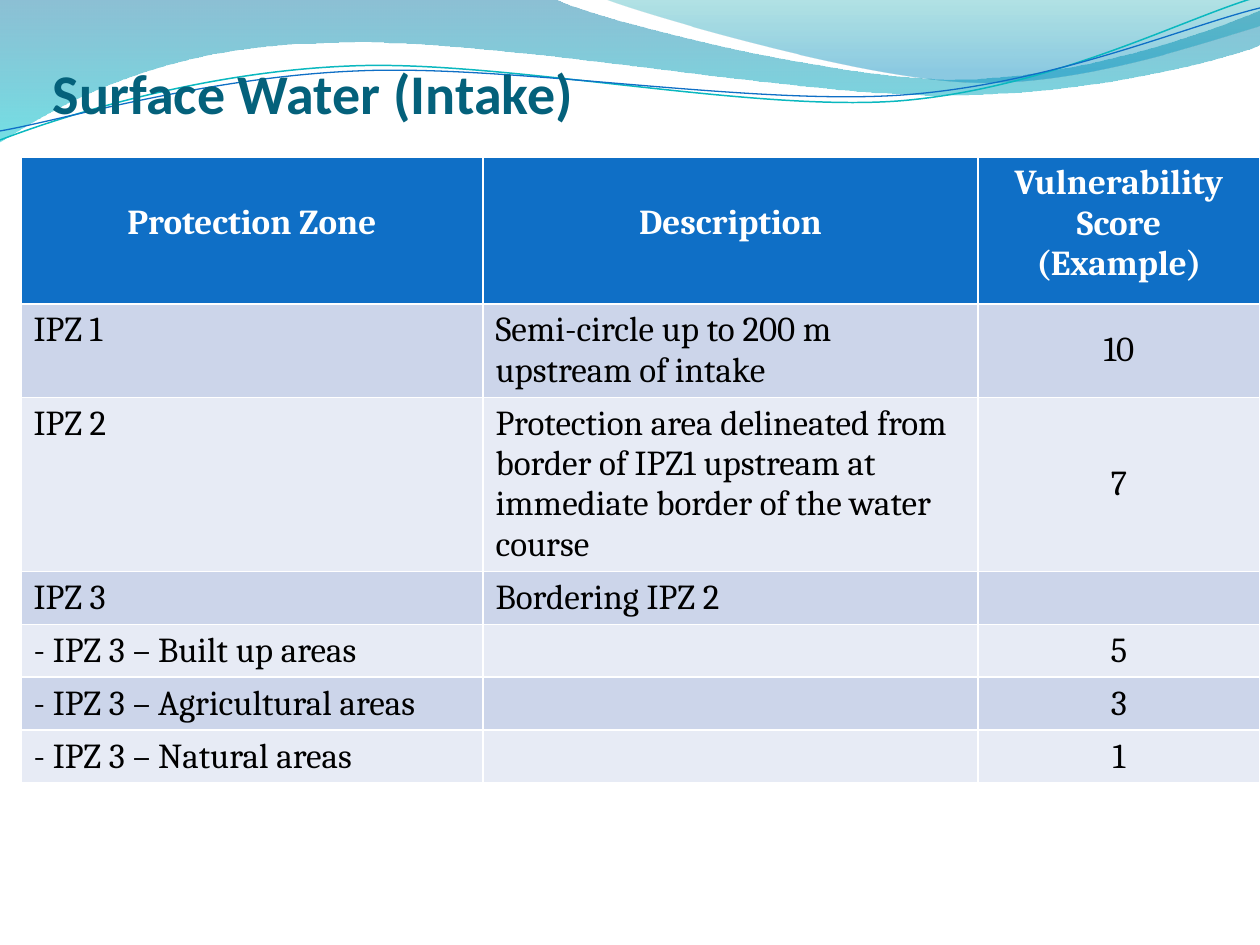
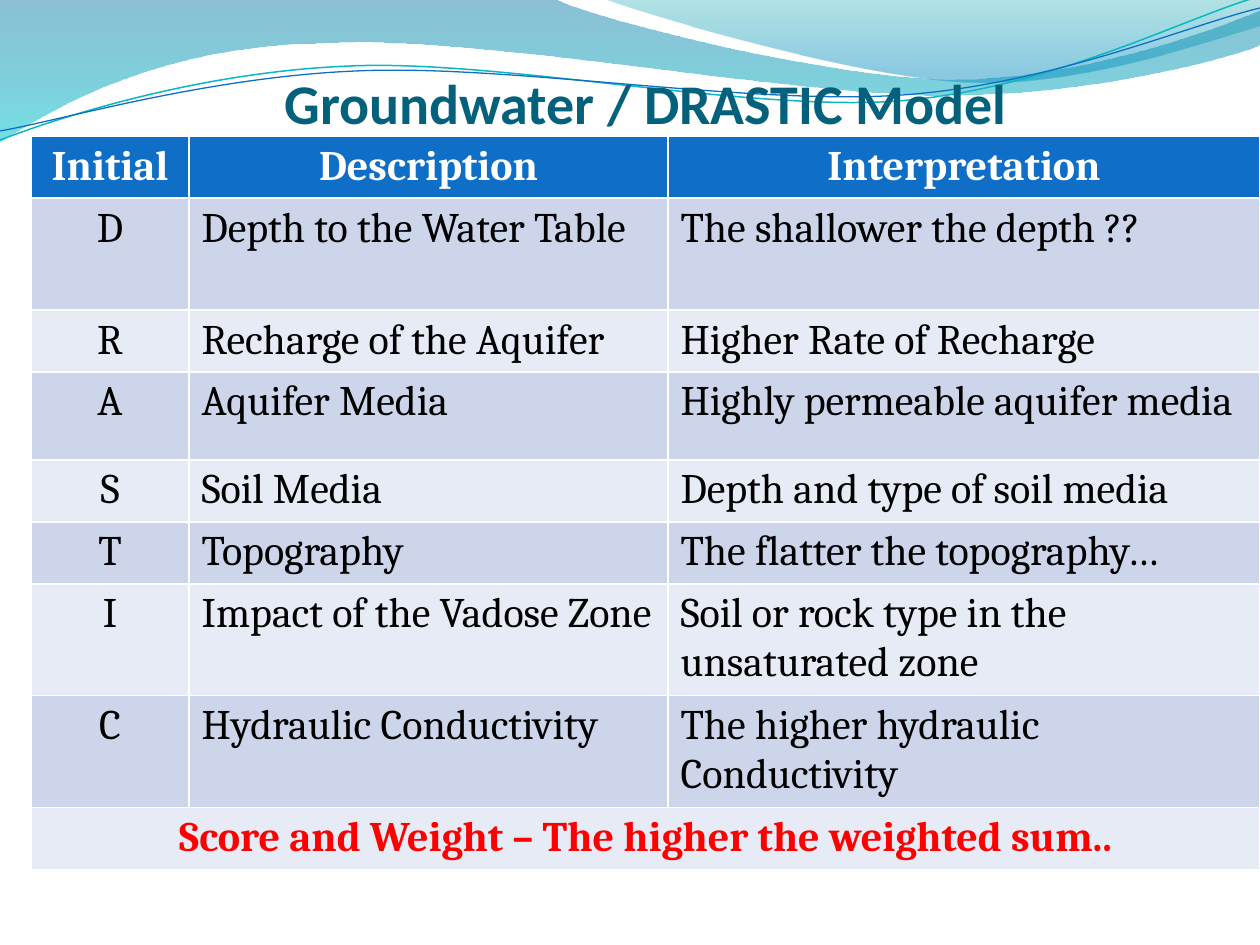
from lxml.etree import SubElement
from pptx import Presentation
from pptx.dml.color import RGBColor
from pptx.enum.text import MSO_ANCHOR as ANCHOR, MSO_AUTO_SIZE as AUTO, PP_ALIGN as ALIGN
from pptx.oxml.ns import qn
from pptx.util import Emu, Pt

SCALE = 914400 / 126
TITLE_FONT, BODY_FONT = "Calibri", "Cambria"
TITLE_COLOR = RGBColor(0x04, 0x61, 0x7B)
HEADER = RGBColor(0x0F, 0x6F, 0xC6)
TEAL = RGBColor(0x0A, 0xB8, 0xBF)
DEEP_BLUE = RGBColor(0x00, 0x74, 0xA1)
AQUA = RGBColor(0x00, 0xC6, 0xCF)
SEA_GREEN = RGBColor(0x00, 0xA1, 0xA9)
SKY = RGBColor(0x00, 0x8B, 0xBF)
WHITE = RGBColor(0xFF, 0xFF, 0xFF)
BLACK = RGBColor(0x00, 0x00, 0x00)
RED = RGBColor(0xFF, 0x00, 0x00)
BANDS = RGBColor(0xCC, 0xD5, 0xEA), RGBColor(0xE7, 0xEB, 0xF5)

WAVES = [
    ([(0, 0), (554, -1), (600, 21, 837, 79, 955, 79),
      (1075, 79, 1207, 33, 1260, 11), (1261, 45),
      (1239, 55, 1096, 96, 940, 95), (783, 95, 481, 35, 324, 43),
      (163, 45, 58, 105, -1, 142), (0, 0)],
     [(0, DEEP_BLUE, 45), (1, AQUA, 55)]),
    ([(604, -1), (641, 14, 859, 78, 969, 82),
      (1079, 87, 1211, 40, 1260, 26), (1260, 0), (604, -1)],
     [(0, SEA_GREEN, 30), (0.8, SKY, 45)]),
]
STRANDS = [
    ([(0, 140), (60, 117, 199, 72, 349, 66), (498, 59, 747, 112, 898, 101),
      (1050, 89, 1182, 19, 1257, -3)], TEAL, 0.85),
    ([(0, 131), (59, 121, 207, 77, 357, 71), (508, 64, 752, 106, 903, 95),
      (1053, 84, 1186, 26, 1260, 8)], HEADER, 0.75),
]

INTAKE_ROWS = [
    ("Protection Zone", "Description", "Vulnerability Score (Example)"),
    ("IPZ 1", "Semi-circle up to 200 m upstream of intake", "10"),
    ("IPZ 2", "Protection area delineated from border of IPZ1 upstream at "
              "immediate border of the water course", "7"),
    ("IPZ 3", "Bordering IPZ 2", ""),
    ("- IPZ 3 – Built up areas", "", "5"),
    ("- IPZ 3 – Agricultural areas", "", "3"),
    ("- IPZ 3 – Natural areas", "", "1"),
]
DRASTIC_ROWS = [
    ("Initial", "Description", "Interpretation"),
    ("D", "Depth to the Water Table", "The shallower the depth ??"),
    ("R", "Recharge of the Aquifer", "Higher Rate of Recharge"),
    ("A", "Aquifer Media", "Highly permeable aquifer media"),
    ("S", "Soil Media", "Depth and type of soil media"),
    ("T", "Topography", "The flatter the topography…"),
    ("I", "Impact of the Vadose Zone", "Soil or rock type in the unsaturated zone"),
    ("C", "Hydraulic Conductivity", "The higher hydraulic Conductivity"),
    ("Score and Weight – The higher the weighted sum..", "", ""),
]


def px(n):
    return Emu(round(n * SCALE))


def set_all(obj, **values):
    for name, value in values.items():
        setattr(obj, name, value)


def add_outline(s, outline, close):
    start, *segments = outline
    points = [(px(seg[i]), px(seg[i + 1]))
              for seg in segments for i in range(0, len(seg), 2)]
    builder = s.shapes.build_freeform(px(start[0]), px(start[1]), scale=1.0)
    builder.add_line_segments(points, close=close)
    sp = builder.convert_to_shape()
    sp.shadow.inherit = False
    lines = iter(list(sp.element.iter(qn("a:lnTo"))))
    for seg in segments:
        first = next(lines)
        if len(seg) == 6:
            first.tag = qn("a:cubicBezTo")
            for line in (next(lines), next(lines)):
                first.append(line[0])
                line.getparent().remove(line)
    return sp


def add_wave(s, outline, stops):
    sp = add_outline(s, outline, True)
    sp.line.fill.background()
    sp.fill.gradient()
    sp.fill.gradient_angle = 270
    for stop, (position, color, _) in zip(sp.fill.gradient_stops, stops):
        stop.position = position
        stop.color.rgb = color
    for clr, (_, _, opacity) in zip(sp.element.iter(qn("a:srgbClr")), stops):
        SubElement(clr, qn("a:alpha")).set("val", str(opacity * 1000))
    return sp


def add_strand(s, outline, color, width):
    sp = add_outline(s, outline, False)
    sp.fill.background()
    sp.line.color.rgb = color
    sp.line.width = Pt(width)
    return sp


def decorate_master(s):
    shapes = [add_wave(s, *wave) for wave in WAVES]
    shapes += [add_strand(s, *strand) for strand in STRANDS]
    tree = s.slide_layout.slide_master.shapes.element
    for i, sp in enumerate(shapes):
        next(sp.element.iter(qn("p:cNvPr"))).set("id", str(100 + i))
        tree.insert(2 + i, sp.element)


def write(tf, text, align, font, size, color, bold):
    tf.text = text
    p = tf.paragraphs[0]
    p.alignment = align
    f = p.runs[0].font
    set_all(f, name=font, size=Pt(size), bold=bold)
    f.color.rgb = color


def set_title(s, text, box, align):
    sp = s.shapes.title
    set_all(sp, **dict(zip(("left", "top", "width", "height"), map(px, box))))
    tf = sp.text_frame
    set_all(tf, margin_left=0, margin_top=px(6), margin_right=0, margin_bottom=0,
            vertical_anchor=ANCHOR.BOTTOM, word_wrap=True, auto_size=AUTO.NONE)
    write(tf, text, align, TITLE_FONT, 32, TITLE_COLOR, True)


def add_grid(s, left, top, widths, heights, rows, size, centred):
    tbl = s.shapes.add_table(len(rows), len(widths), px(left), px(top),
                             px(sum(widths)), px(sum(heights))).table
    for col, width in zip(tbl.columns, widths):
        col.width = px(width)
    for row, height in zip(tbl.rows, heights):
        row.height = px(height)
    for r, texts in enumerate(rows):
        for c, text in enumerate(texts):
            cell = tbl.cell(r, c)
            cell.fill.solid()
            cell.fill.fore_color.rgb = BANDS[(r - 1) % 2] if r else HEADER
            if text:
                align = ALIGN.CENTER if r == 0 or c == centred else ALIGN.LEFT
                write(cell.text_frame, text, align, BODY_FONT, size,
                      BLACK if r else WHITE, r == 0)
    return tbl


def intake_slide(s):
    set_title(s, "Surface Water (Intake)", (53, 0, 1134, 126), ALIGN.LEFT)
    tbl = add_grid(s, 21, 157, (462, 495, 282), (147, 93, 174) + (53,) * 4,
                   INTAKE_ROWS, 20, 2)
    for c in range(2):
        tbl.cell(0, c).margin_top = px(46)
    for r in range(1, len(INTAKE_ROWS)):
        tbl.cell(r, 2).vertical_anchor = ANCHOR.MIDDLE


def drastic_slide(s):
    set_title(s, "Groundwater / DRASTIC Model", (79, -21, 1134, 157), ALIGN.CENTER)
    tbl = add_grid(s, 31, 136, (158, 479, 592),
                   (62, 112, 62, 88, 62, 62, 112, 112, 62), DRASTIC_ROWS, 24, 0)
    last = len(DRASTIC_ROWS) - 1
    total = tbl.cell(last, 0)
    total.merge(tbl.cell(last, 2))
    f = total.text_frame.paragraphs[0].runs[0].font
    f.bold = True
    f.color.rgb = RED


def main():
    prs = Presentation()
    set_all(prs, slide_width=px(1260), slide_height=px(945))
    layout = prs.slide_layouts.get_by_name("Title Only")
    for i, build in enumerate((intake_slide, drastic_slide)):
        s = prs.slides.add_slide(layout)
        if i == 0:
            decorate_master(s)
        build(s)
    prs.save("out.pptx")


if __name__ == "__main__":
    main()
